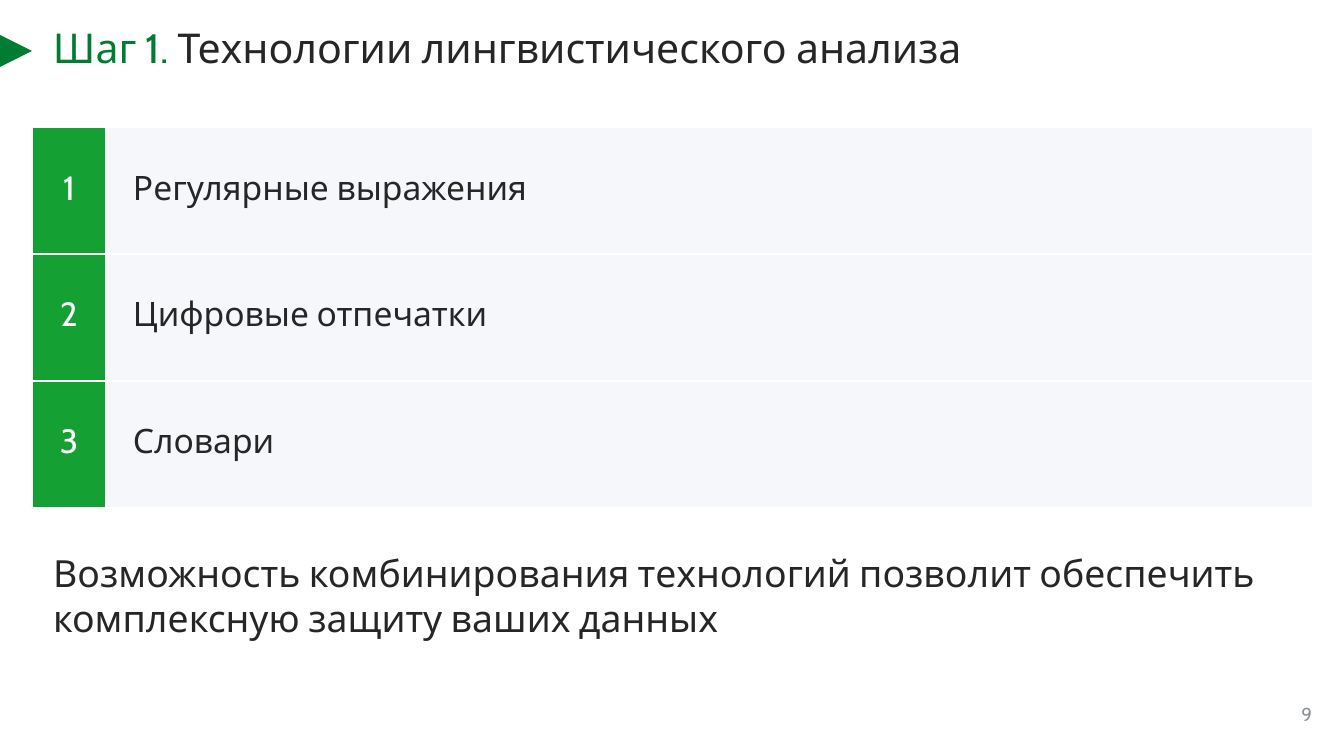
"""Build a slide listing the linguistic analysis technologies of step 1."""

from lxml import etree
from pptx import Presentation
from pptx.dml.color import RGBColor
from pptx.enum.shapes import MSO_SHAPE
from pptx.enum.text import MSO_ANCHOR, PP_ALIGN
from pptx.oxml.ns import qn
from pptx.util import Emu, Pt

TRIANGLE = MSO_SHAPE.ISOSCELES_TRIANGLE
TOP, MIDDLE, BOTTOM = MSO_ANCHOR.TOP, MSO_ANCHOR.MIDDLE, MSO_ANCHOR.BOTTOM
LEFT, CENTER, RIGHT = PP_ALIGN.LEFT, PP_ALIGN.CENTER, PP_ALIGN.RIGHT

PX_PER_INCH = 134.4
FONT = "Cabin"
COLORS = {
    "white": "FFFFFF",
    "dark_green": "007D32",
    "green": "14A032",
    "ink": "262626",
    "gray": "8C9196",
    "pale": "F5F7FA",
}
TECHNOLOGIES = ["Регулярные выражения", "Цифровые отпечатки", "Словари"]
SUMMARY = (
    "Возможность комбинирования технологий позволит обеспечить "
    "комплексную защиту ваших данных"
)


def px(length):
    return Emu(round(length * 914400 / PX_PER_INCH))


def color(name):
    return RGBColor.from_string(COLORS[name])


def fill(target, name):
    target.fill.solid()
    target.fill.fore_color.rgb = color(name)


def format_run(run, size, color_name):
    run.font.name = FONT
    run.font.size = Pt(size)
    run.font.color.rgb = color(color_name)


def set_margins(target, left=0, right=0, bottom=0):
    target.margin_left, target.margin_right = px(left), px(right)
    target.margin_top, target.margin_bottom = 0, px(bottom)


def add_text(slide, box, parts, size, anchor=TOP, align=LEFT):
    text_frame = slide.shapes.add_textbox(*map(px, box)).text_frame
    text_frame.word_wrap = True
    text_frame.vertical_anchor = anchor
    set_margins(text_frame)
    paragraph = text_frame.paragraphs[0]
    paragraph.alignment = align
    for text, color_name in parts:
        run = paragraph.add_run()
        run.text = text
        format_run(run, size, color_name)
    return paragraph


def add_marker(slide):
    marker = slide.shapes.add_shape(TRIANGLE, *map(px, (0, 35, 32, 32)))
    marker.rotation = 90
    marker.shadow.inherit = False
    fill(marker, "dark_green")
    marker.line.fill.background()


def set_borders(cell, color_name, width):
    properties = cell._tc.get_or_add_tcPr()
    for position, side in enumerate(("lnL", "lnR", "lnT", "lnB")):
        line = etree.Element(qn(f"a:{side}"), w=str(Pt(width)))
        solid = etree.SubElement(line, qn("a:solidFill"))
        etree.SubElement(solid, qn("a:srgbClr"), val=COLORS[color_name])
        properties.insert(position, line)


def format_cell(cell, text, text_color, fill_color, align, left=0, right=0):
    cell.text_frame.text = text
    cell.vertical_anchor = MIDDLE
    set_margins(cell, left, right, bottom=5)
    paragraph = cell.text_frame.paragraphs[0]
    paragraph.alignment = align
    paragraph.space_before = Pt(6)
    format_run(paragraph.runs[0], 18, text_color)
    fill(cell, fill_color)
    set_borders(cell, "white", 1)


def add_technology_table(slide):
    row_height, widths = 127, (74, 1207)
    rows = len(TECHNOLOGIES)
    box = (32, 127, sum(widths), rows * row_height)
    table = slide.shapes.add_table(rows, len(widths), *map(px, box)).table
    table.first_row = table.horz_banding = False
    for column, width in zip(table.columns, widths):
        column.width = px(width)
    for index, technology in enumerate(TECHNOLOGIES):
        table.rows[index].height = px(row_height)
        format_cell(table.cell(index, 0), str(index + 1), "white", "green", CENTER)
        format_cell(table.cell(index, 1), technology, "ink", "pale", LEFT, 27, 21)


def main():
    presentation = Presentation()
    presentation.slide_width, presentation.slide_height = px(1344), px(756)
    slide = presentation.slides.add_slide(presentation.slide_layouts[6])

    add_text(slide, (1259, 672, 53, 53), [("9", "gray")], 10, BOTTOM, RIGHT)
    add_marker(slide)
    title_parts = [
        ("Шаг 1.", "dark_green"),
        (" Технологии лингвистического анализа", "ink"),
    ]
    title = add_text(slide, (53, 27, 984, 53), title_parts, 22)
    title.line_spacing = Pt(24)
    add_technology_table(slide)
    summary = add_text(slide, (53, 550, 1238, 159), [(SUMMARY, "ink")], 20)
    summary.space_before = Pt(12)

    presentation.save("out.pptx")


if __name__ == "__main__":
    main()
